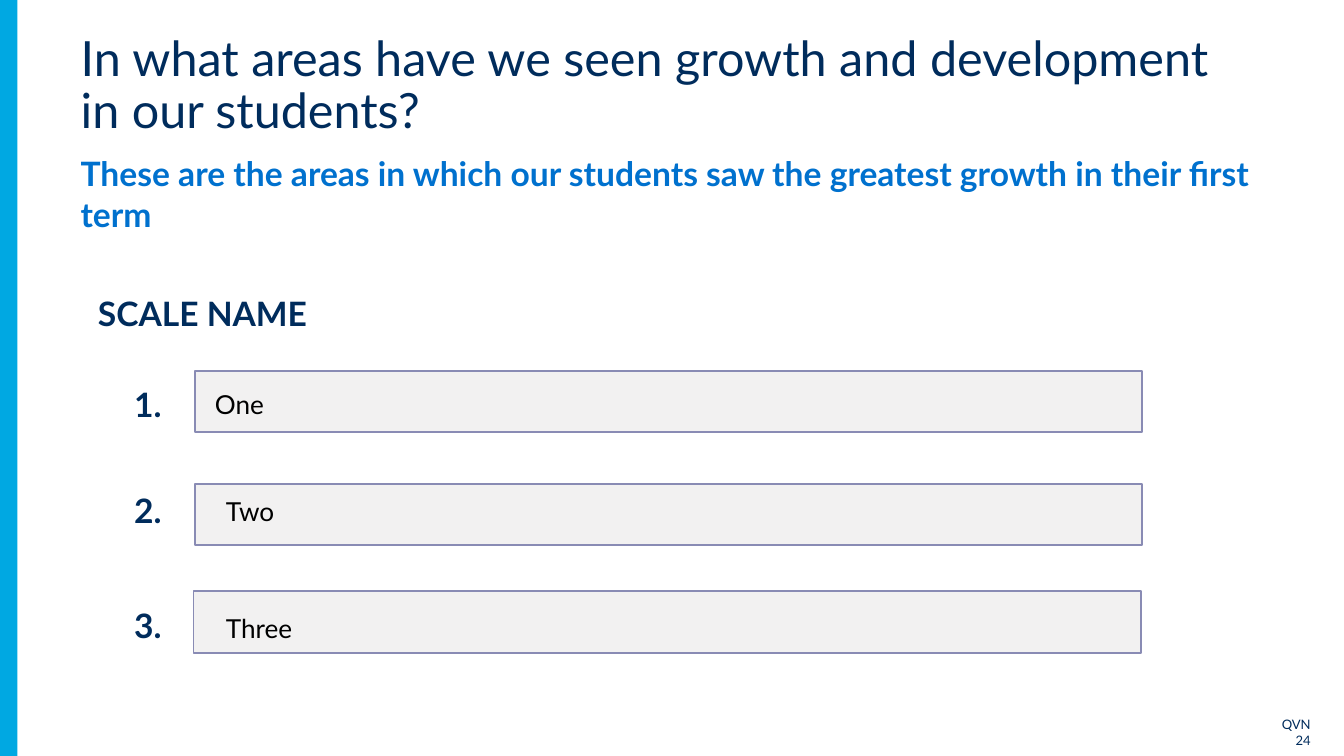
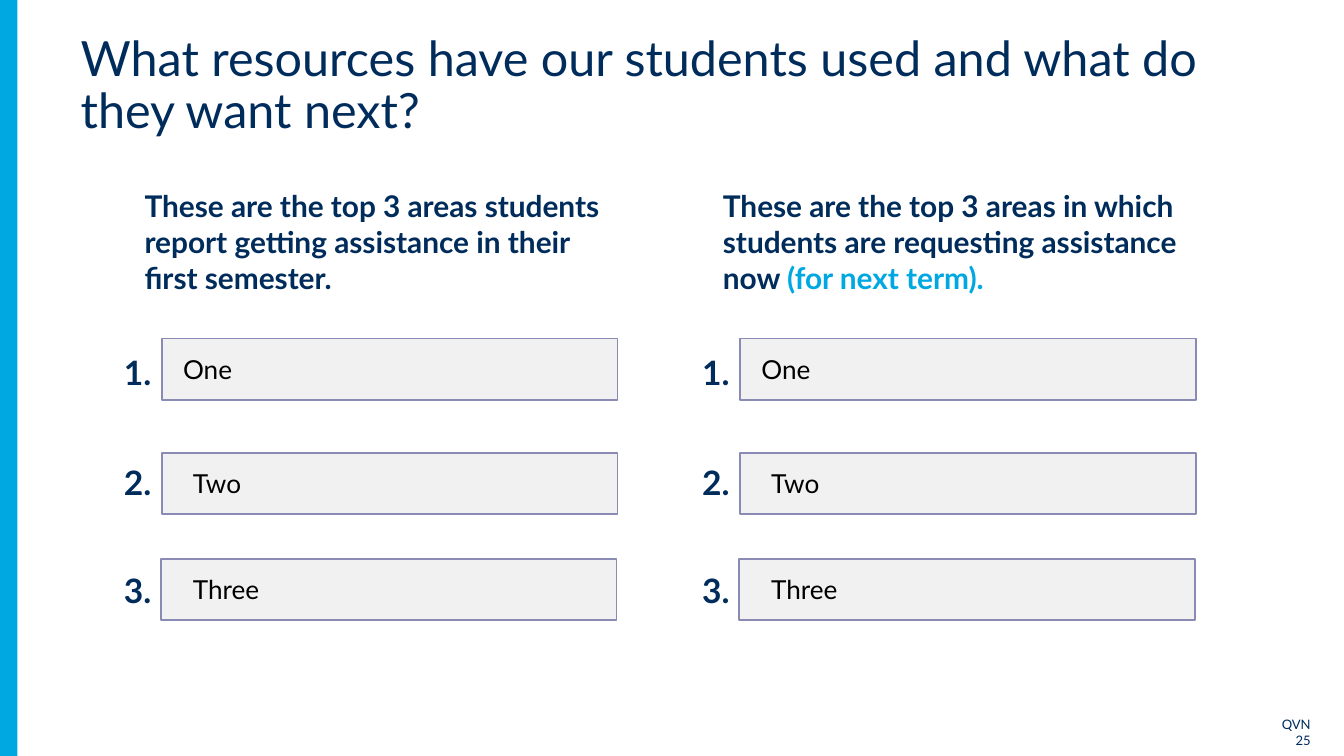
from dataclasses import dataclass

from lxml.etree import SubElement
from pptx import Presentation
from pptx.dml.color import RGBColor
from pptx.enum.shapes import MSO_SHAPE
from pptx.enum.text import MSO_ANCHOR, MSO_AUTO_SIZE, PP_ALIGN
from pptx.oxml.ns import qn
from pptx.util import Pt


@dataclass(frozen=True)
class Theme:
    font: str = "Lato"
    navy: str = "002C5C"
    blue: str = "0071CE"
    cyan: str = "00A8E2"
    black: str = "000000"
    bar_fill: str = "F2F1F1"
    bar_line: str = "898BB4"
    title_size: int = 26
    heading_size: int = 18
    column_size: int = 16
    entry_size: int = 14
    footer_size: int = 7


@dataclass(frozen=True)
class Box:
    left: float
    top: float
    width: float
    height: float

    def lengths(self):
        return Pt(self.left), Pt(self.top), Pt(self.width), Pt(self.height)


@dataclass(frozen=True)
class Entry:
    """One ranked row; tops are measured from the top of its list."""
    name: str
    bar_top: float
    number_top: float
    name_top: float
    bar_shift: float = 0
    name_shift: float = 0
    indent: float = 0


THEME = Theme()
PAGE = Box(0, 0, 720, 405)
BAR_HEIGHT = 33
ENTRY_INDENT = 9.5


def write(frame, text, size, color=THEME.navy, bold=False, align=PP_ALIGN.LEFT,
          after=0, spacing=1.0, indent=0, anchor=MSO_ANCHOR.TOP,
          fit=MSO_AUTO_SIZE.SHAPE_TO_FIT_TEXT, accent="", accent_color=THEME.cyan):
    """Write one paragraph, with an optional accented ending."""
    frame.word_wrap = True
    frame.auto_size = fit
    frame.vertical_anchor = anchor
    paragraph = frame.paragraphs[0]
    paragraph.text = text
    if accent:
        paragraph.add_run().text = accent
    paragraph.alignment = align
    paragraph.line_spacing = spacing
    paragraph.space_before = Pt(0)
    paragraph.space_after = Pt(after)
    properties = paragraph._p.get_or_add_pPr()
    properties.set("marL", str(Pt(indent)))
    properties.set("indent", "0")
    SubElement(properties, qn("a:buNone"))
    paragraph.font.size = Pt(size)
    for run in paragraph.runs:
        run.font.name = THEME.font
        run.font.size = Pt(size)
        run.font.bold = bold
        run.font.color.rgb = RGBColor.from_string(color)
    if accent:
        run.font.color.rgb = RGBColor.from_string(accent_color)


def add_text(slide, box, text, size, **style):
    label = slide.shapes.add_textbox(*box.lengths())
    write(label.text_frame, text, size, **style)


def add_bar(slide, box, fill, line=None):
    bar = slide.shapes.add_shape(MSO_SHAPE.RECTANGLE, *box.lengths())
    bar.shadow.inherit = False
    bar.fill.solid()
    bar.fill.fore_color.rgb = RGBColor.from_string(fill)
    if line:
        bar.line.color.rgb = RGBColor.from_string(line)
        bar.line.width = Pt(1)
    else:
        bar.line.fill.background()


def fill_placeholder(placeholder, box, text, size, **style):
    (placeholder.left, placeholder.top,
     placeholder.width, placeholder.height) = box.lengths()
    write(placeholder.text_frame, text, size, fit=MSO_AUTO_SIZE.NONE, **style)


def add_page(deck, layout, title, number):
    """Start a slide with the side band, page number and title."""
    slide = deck.slides.add_slide(deck.slide_layouts.get_by_name(layout))
    add_text(slide, Box(670.3, 380.2, 38.9, 15.8), f"QVN\v{number}",
             THEME.footer_size, align=PP_ALIGN.RIGHT)
    add_bar(slide, Box(0, 0, 9.4, PAGE.height), THEME.cyan)
    fill_placeholder(slide.shapes.title, Box(36, 15.8, 623.5, 61.2), title,
                     THEME.title_size, spacing=0.9, anchor=MSO_ANCHOR.MIDDLE)
    return slide


def add_ranking(slide, box, entries, number_gap, number_width):
    """Numbered bars; box spans the bars, numbers stand to its left."""
    for rank, entry in enumerate(entries, start=1):
        add_bar(slide, Box(box.left + entry.bar_shift, box.top + entry.bar_top,
                           box.width, BAR_HEIGHT), THEME.bar_fill, THEME.bar_line)
        add_text(slide, Box(box.left + entry.name_shift, box.top + entry.name_top,
                            box.width - 6, 24.5), entry.name, THEME.entry_size,
                 color=THEME.black, after=16, indent=entry.indent)
        add_text(slide, Box(box.left - number_gap, box.top + entry.number_top,
                            number_width, 28.8), f"{rank}.",
                 THEME.heading_size, bold=True, after=16)


def add_growth_slide(deck):
    slide = add_page(deck, "Title and Content",
                     "In what areas have we seen growth and development in our students?", 24)
    fill_placeholder(slide.placeholders[1], Box(36, 78.5, 643, 33.1),
                     "These are the areas in which our students saw the greatest "
                     "growth in their first term",
                     THEME.heading_size, color=THEME.blue, bold=True)
    add_text(slide, Box(45.4, 153.4, 201.6, 28.8), "SCALE NAME",
             THEME.heading_size, bold=True, after=16)
    entries = [
        Entry("One", 0, 3.6, 5.8, name_shift=3.6),
        Entry("Two", 60.5, 60.5, 63.4, indent=ENTRY_INDENT),
        Entry("Three", 118, 121.7, 126, bar_shift=-0.7, indent=ENTRY_INDENT),
    ]
    add_ranking(slide, Box(104.4, 198.7, 507.6, 151), entries,
                number_gap=39.6, number_width=29.5)


def add_resource_column(slide, box, heading, accent=""):
    """A heading over a ranked list, both inside the column box."""
    add_text(slide, Box(box.left, box.top, box.width, 65.5), heading,
             THEME.column_size, bold=True, after=16, accent=accent)
    entries = [
        Entry("One", 0, 3.6, 4.3, name_shift=4.3),
        Entry("Two", 61.2, 62.6, 65.5, indent=ENTRY_INDENT),
        Entry("Three", 118, 120.2, 122.4, bar_shift=-0.5, indent=ENTRY_INDENT),
    ]
    add_ranking(slide, Box(box.left + 16.3, box.top + 84.2, 244.1, 151), entries,
                number_gap=27.4, number_width=32.4)


def add_resources_slide(deck):
    slide = add_page(deck, "Title Only",
                     "What resources have our students used and what do they want next?", 25)
    add_resource_column(slide, Box(70.4, 97.2, 270.7, 236),
                        "These are the top 3 areas students report getting "
                        "assistance in their first semester.")
    add_resource_column(slide, Box(380.2, 97.2, 270.7, 236),
                        "These are the top 3 areas in which students are "
                        "requesting assistance now ",
                        accent="(for next term).")


def main():
    deck = Presentation()
    deck.slide_width, deck.slide_height = Pt(PAGE.width), Pt(PAGE.height)
    add_growth_slide(deck)
    add_resources_slide(deck)
    deck.save("out.pptx")


if __name__ == "__main__":
    main()
